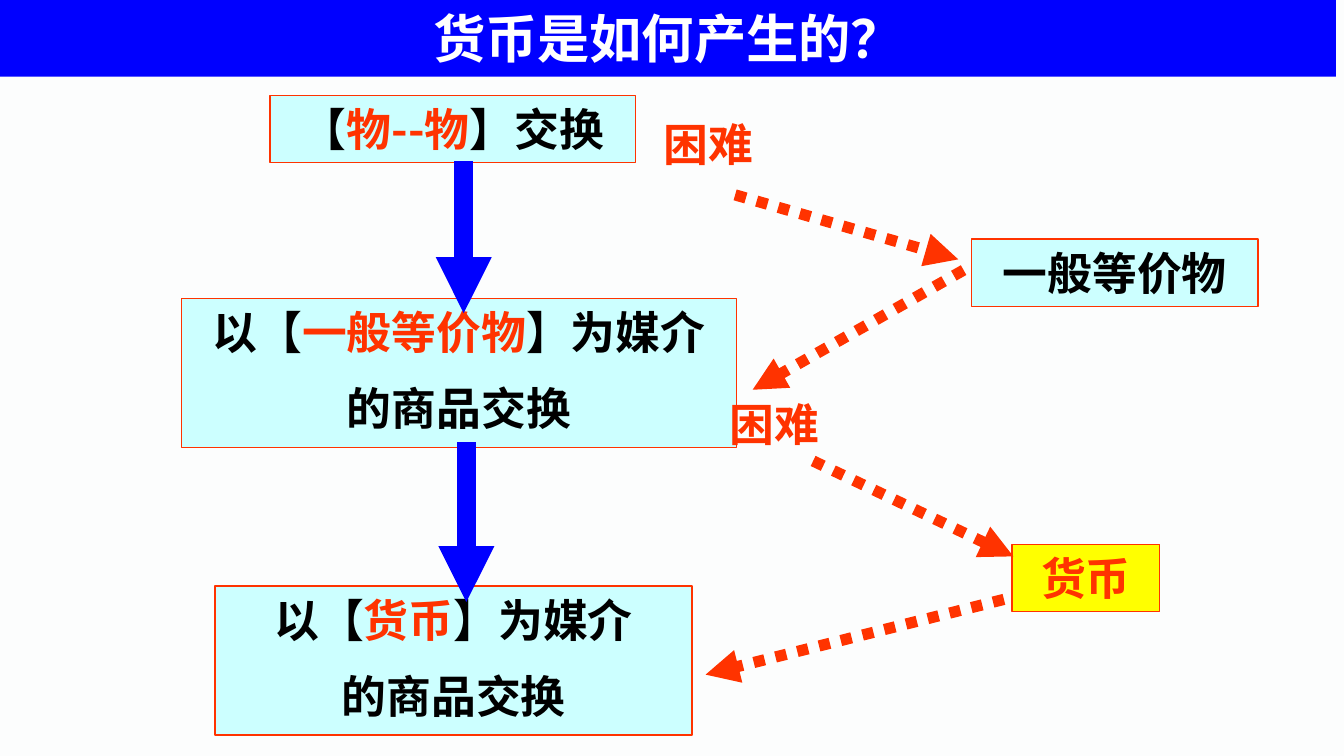
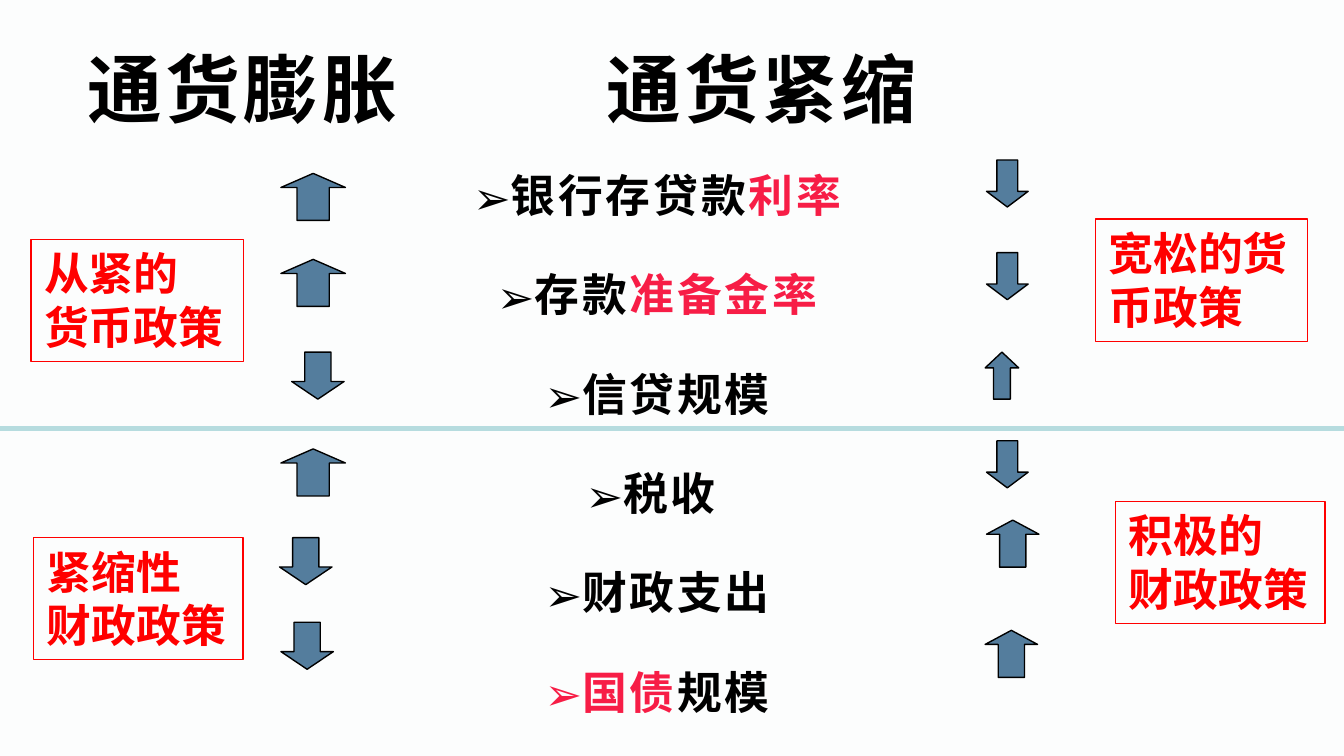
from dataclasses import dataclass

from lxml.etree import SubElement
from pptx import Presentation
from pptx.dml.color import RGBColor
from pptx.enum.dml import MSO_LINE
from pptx.enum.shapes import MSO_CONNECTOR, MSO_SHAPE
from pptx.enum.text import MSO_ANCHOR, MSO_AUTO_SIZE, PP_ALIGN
from pptx.oxml.ns import qn
from pptx.util import Inches, Pt


@dataclass(frozen=True)
class Theme:
    font: str = "Noto Sans CJK SC"
    paper: str = "FCFDFD"
    ink: str = "000000"
    white: str = "FFFFFF"
    blue: str = "0000FF"
    pale: str = "CCFFFF"
    yellow: str = "FFFF00"
    orange: str = "FF3300"
    red: str = "FF0000"
    crimson: str = "F71D46"
    steel: str = "547D9D"
    divider: str = "B6DCDF"
    body: int = 24
    band: int = 28
    heading: int = 40
    outline: float = 0.75


THEME = Theme()
TITLE_ONLY = 5


def rgb(code):
    return RGBColor.from_string(code)


def place(box, left, top, width, height):
    """Absolute frame for a part given relative to its box."""
    return box[0] + left, box[1] + top, width, height


def inches(values):
    return [Inches(round(value, 2)) for value in values]


def write(shape, paragraphs, size=THEME.body, color=THEME.ink, align=PP_ALIGN.LEFT,
          anchor=MSO_ANCHOR.TOP, grow=True, before=0, after=0, line=None,
          tracking=0, bullet=None, indent=0, tab=None):
    """Fill a shape; a run is plain text or a (text, colour) pair."""
    frame = shape.text_frame
    frame.word_wrap = True
    frame.auto_size = MSO_AUTO_SIZE.SHAPE_TO_FIT_TEXT if grow else MSO_AUTO_SIZE.NONE
    frame.vertical_anchor = anchor
    for index, runs in enumerate(paragraphs):
        paragraph = frame.add_paragraph() if index else frame.paragraphs[0]
        paragraph.alignment = align
        paragraph.space_before = Pt(before if index else 0)
        paragraph.space_after = Pt(after)
        if line:
            paragraph.line_spacing = line
        props = paragraph._p.get_or_add_pPr()
        if bullet:
            props.set("marL", str(Inches(indent)))
            props.set("indent", str(-Inches(indent)))
            SubElement(props, qn("a:buFont"), typeface=THEME.font)
            SubElement(props, qn("a:buChar"), char=bullet)
        if tab:
            stops = SubElement(props, qn("a:tabLst"))
            SubElement(stops, qn("a:tab"), pos=str(Inches(tab)), algn="l")
        for part in runs:
            text, tint = (part, color) if isinstance(part, str) else part
            run = paragraph.add_run()
            run.text = text
            run.font.size, run.font.bold = Pt(size), True
            run.font.color.rgb = rgb(tint)
            run.font.name = THEME.font
            run_props = run._r.get_or_add_rPr()
            SubElement(run_props, qn("a:ea"), typeface=THEME.font)
            if tracking:
                run_props.set("spc", str(int(tracking * 100)))


def add_block(slide, frame, kind=MSO_SHAPE.RECTANGLE, fill=None, outline=THEME.ink):
    block = slide.shapes.add_shape(kind, *inches(frame))
    block.shadow.inherit = False
    if fill:
        block.fill.solid()
        block.fill.fore_color.rgb = rgb(fill)
    else:
        block.fill.background()
    block.line.color.rgb = rgb(outline)
    block.line.width = Pt(THEME.outline)
    return block


def add_line(slide, box, start, end, color, width, dotted=False, arrow=True):
    points = [box[0] + start[0], box[1] + start[1], box[0] + end[0], box[1] + end[1]]
    connector = slide.shapes.add_connector(MSO_CONNECTOR.STRAIGHT, *inches(points))
    connector.line.color.rgb = rgb(color)
    connector.line.width = Pt(width)
    if dotted:
        connector.line.dash_style = MSO_LINE.ROUND_DOT
    if arrow:
        SubElement(connector.line._get_or_add_ln(), qn("a:tailEnd"), type="triangle")
    SubElement(connector._element.spPr, qn("a:effectLst"))


def set_title(slide, box, text, fill=None, **format):
    title = slide.shapes.title
    title.left, title.top, title.width, title.height = inches(box)
    if fill:
        title.fill.solid()
        title.fill.fore_color.rgb = rgb(fill)
    write(title, [[text]], grow=False, **format)


# Slide 1: origin of money
def exchange_stages(slide, box):
    def medium(name):
        return [["以【", (name, THEME.orange), "】为媒介"], ["的商品交换"]]

    barter = [["【", ("物--物", THEME.orange), "】交换"]]
    stages = [
        ((0.66, 0, 2.72, 0.5), barter),
        ((0, 1.51, 4.13, 1.11), medium("一般等价物")),
        ((0.25, 3.65, 3.55, 1.11), medium("货币")),
    ]
    for frame, text in stages:
        stage = add_block(slide, place(box, *frame), fill=THEME.pale, outline=THEME.orange)
        write(stage, text, align=PP_ALIGN.CENTER, before=THEME.body / 2)
    # Steps down from stage to stage
    for x, top, bottom in [(2.1, 0.49, 1.62), (2.12, 2.58, 3.77)]:
        add_line(slide, box, (x, top), (x, bottom), THEME.blue, 10)


def difficulties(slide, box):
    for left, top in [(0, 0), (0.49, 2.08)]:
        label = slide.shapes.add_textbox(*inches(place(box, left, top, 1.58, 0.5)))
        write(label, [["困难"]], color=THEME.orange, align=PP_ALIGN.CENTER)
    # Answers to each difficulty
    answers = [
        ("一般等价物", (2.75, 0.96, 2.13, 0.5), THEME.pale, THEME.ink),
        ("货币", (3.05, 3.23, 1.1, 0.5), THEME.yellow, THEME.orange),
    ]
    for text, frame, fill, color in answers:
        answer = add_block(slide, place(box, *frame), fill=fill, outline=THEME.orange)
        write(answer, [[text]], color=color, align=PP_ALIGN.CENTER)
    # Dotted route out to the answer and back
    route = [
        ((0.99, 0.63), (2.65, 1.11)),
        ((2.69, 1.19), (1.12, 2.08)),
        ((1.57, 2.61), (3.06, 3.32)),
        ((2.99, 3.64), (0.77, 4.2)),
    ]
    for start, end in route:
        add_line(slide, box, start, end, THEME.orange, 6, dotted=True)


def origin_slide(prs):
    slide = prs.slides.add_slide(prs.slide_layouts[TITLE_ONLY])
    set_title(slide, (0, 0, 9.94, 0.57), "货币是如何产生的？", fill=THEME.blue,
              size=THEME.band, color=THEME.white, align=PP_ALIGN.CENTER)
    exchange_stages(slide, (1.35, 0.71, 4.13, 4.76))
    difficulties(slide, (4.48, 0.82, 4.88, 4.2))


# Slide 2: inflation and deflation policies
def policy_tools(slide, box):
    tools = [
        ["银行存贷款", ("利率", THEME.crimson)],
        ["存款", ("准备金率", THEME.crimson)],
        ["信贷规模"],
        ["税收 "],
        ["财政支出"],
        [("国债", THEME.crimson), "规模"],
    ]
    listing = slide.shapes.add_textbox(*inches(box))
    write(listing, tools, align=PP_ALIGN.CENTER, grow=False, line=1.5, after=10,
          tracking=1.5, bullet="➢", indent=0.19)


def policy_side(slide, box, arrows, labels):
    for direction, left, top, width in arrows:
        up = direction == "up"
        kind = MSO_SHAPE.UP_ARROW if up else MSO_SHAPE.DOWN_ARROW
        arrow = add_block(slide, place(box, left, top, width, 0.35), kind, THEME.steel)
        arrow.adjustments[0] = 0.5
        # Narrow up arrows need a longer head
        arrow.adjustments[1] = (0.47 if width < 0.3 else 0.3) if up else 0.375
    for lines, left, top, width in labels:
        label = add_block(slide, place(box, left, top, width, 0.91), outline=THEME.red)
        write(label, [[text] for text in lines], color=THEME.red)


def policy_slide(prs):
    slide = prs.slides.add_slide(prs.slide_layouts[TITLE_ONLY])
    set_title(slide, (0.55, 0.18, 9, 0.94), "通货膨胀\t通货紧缩", size=THEME.heading,
              anchor=MSO_ANCHOR.MIDDLE, tracking=2, tab=3.86)
    policy_tools(slide, (2.75, 1, 4.28, 4.1))
    add_line(slide, (0, 3.19), (0, 0), (10, 0), THEME.divider, 3, arrow=False)
    # Tightening against inflation
    policy_side(
        slide, (0.23, 1.19, 2.34, 3.85),
        arrows=[("up", 1.86, 0.1, 0.48), ("up", 1.86, 0.74, 0.48),
                ("down", 1.94, 1.43, 0.39), ("up", 1.86, 2.15, 0.48),
                ("down", 1.85, 2.81, 0.39), ("down", 1.86, 3.44, 0.39)],
        labels=[(["从紧的", "货币政策"], 0, 0.59, 1.58),
                (["紧缩性 财政政策"], 0.02, 2.81, 1.56)])
    # Loosening against deflation
    policy_side(
        slide, (7.33, 1.19, 2.53, 3.85),
        arrows=[("down", 0.01, 0, 0.31), ("down", 0.01, 0.69, 0.31),
                ("up", 0, 1.43, 0.25), ("down", 0.01, 2.09, 0.31),
                ("up", 0.01, 2.68, 0.39), ("up", 0, 3.5, 0.39)],
        labels=[(["宽松的货币政策"], 0.82, 0.44, 1.58),
                (["积极的 财政政策"], 0.97, 2.54, 1.56)])


def main():
    prs = Presentation()
    # Widescreen, 16:9
    prs.slide_width = Inches(10)
    prs.slide_height = Inches(10) * 9 // 16
    paper = prs.slide_master.background.fill
    paper.solid()
    paper.fore_color.rgb = rgb(THEME.paper)
    origin_slide(prs)
    policy_slide(prs)
    prs.save("out.pptx")


if __name__ == "__main__":
    main()
